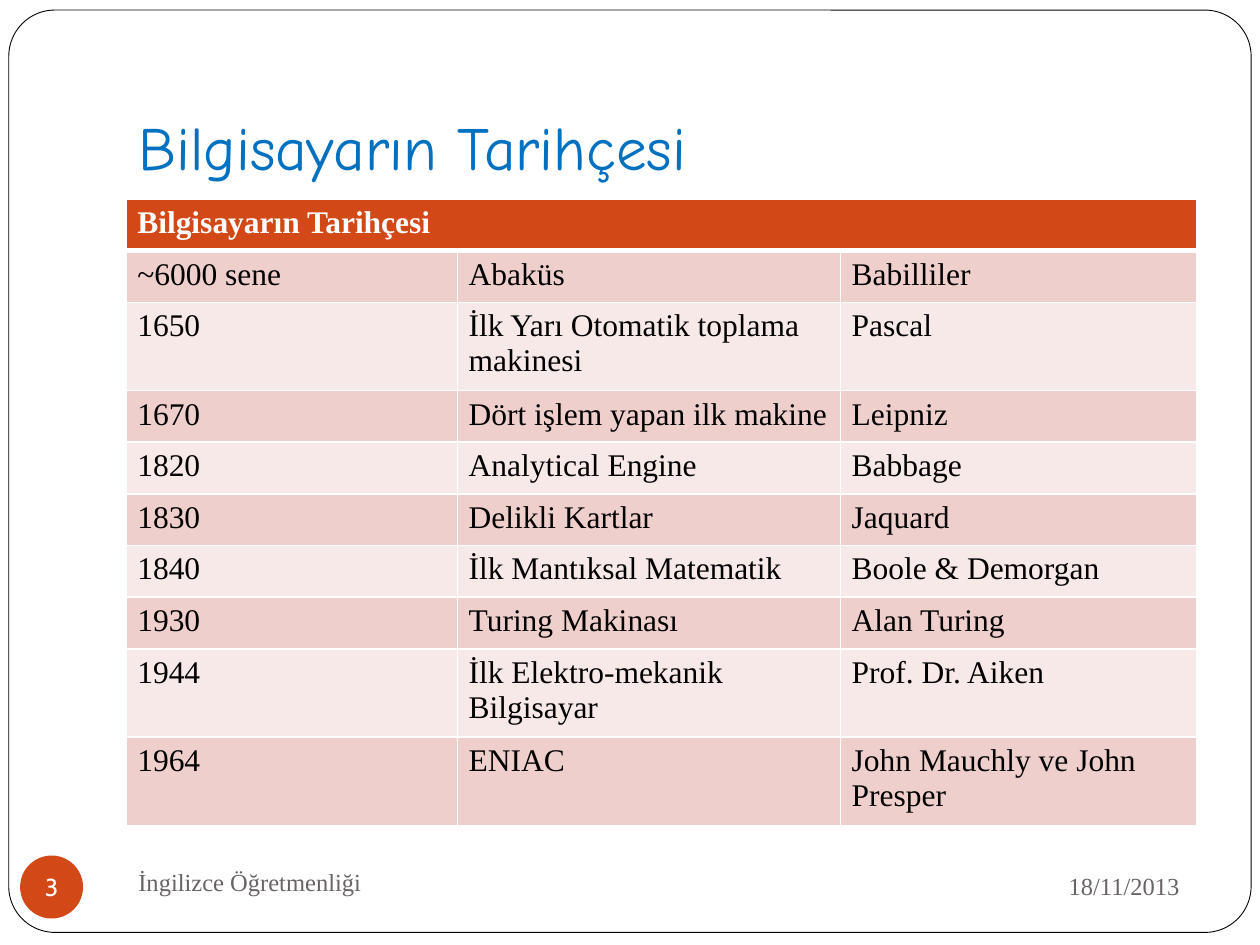
from lxml import etree
from pptx import Presentation
from pptx import util as u
from pptx.dml.color import RGBColor
from pptx.enum import shapes, text
from pptx.oxml import ns

# Content
TITLE = "Bilgisayarın Tarihçesi"
FOOTER, DATE, NUMBER = "İngilizce Öğretmenliği", "18/11/2013", "3"
HISTORY = [
    ("~6000 sene", "Abaküs", "Babilliler"),
    ("1650", "İlk Yarı Otomatik toplama makinesi", "Pascal"),
    ("1670", "Dört işlem yapan ilk makine", "Leipniz"),
    ("1820", "Analytical Engine", "Babbage"),
    ("1830", "Delikli Kartlar", "Jaquard"),
    ("1840", "İlk Mantıksal Matematik", "Boole & Demorgan"),
    ("1930", "Turing Makinası", "Alan Turing"),
    ("1944", "İlk Elektro-mekanik Bilgisayar", "Prof. Dr. Aiken"),
    ("1964", "ENIAC", "John Mauchly ve John Presper"),
]

# Look: styles are (font, points, colour, bold)
THEME = {
    "title": ("Comic Neue", 35, "0070C0", False),
    "head": ("Times New Roman", 18, "FFFFFF", True),
    "body": ("Times New Roman", 18, "000000", False),
    "footer": ("Times New Roman", 14, "696464", False),
    "number": ("Cabin", 14, "FFFFFF", False),
    "accent": "D34817", "bands": ("EFCFCC", "F7E9E8"),
    "paper": "FFFFFF", "outline": "000000",
}

# Layout in inches
WIDTH, HEIGHT = 10, 7.5
LEFT, CONTENT = WIDTH * 0.1, WIDTH * 0.85
COLUMNS = (2.63, 3.04, 2.83)
TABLE_TOP, ROW, WRAPPED_ROW = 1.58, 0.41, 0.65
WRAPPED = {"1650", "1944", "1964"}
INSETS = (0.1, 0.05, 0.1, 0.05)


def color(value):
    return RGBColor.from_string(value)


def inches(values):
    return [u.Inches(value) for value in values]


def write(frame, words, style, align=text.PP_ALIGN.LEFT):
    font, size, ink, bold = THEME[style]
    frame.text = words
    para = frame.paragraphs[0]
    para.alignment = align
    span = para.runs[0].font
    span.name, span.size, span.bold = font, u.Pt(size), bold
    span.color.rgb = color(ink)


def set_insets(target, insets):
    (target.margin_left, target.margin_top,
     target.margin_right, target.margin_bottom) = inches(insets)


def add_text(page, place, words, style, anchor=text.MSO_ANCHOR.MIDDLE,
             insets=INSETS, align=text.PP_ALIGN.LEFT):
    frame = page.shapes.add_textbox(*inches(place)).text_frame
    frame.word_wrap = True
    frame.vertical_anchor = anchor
    set_insets(frame, insets)
    write(frame, words, style, align)


def add_figure(page, kind, place, fill):
    figure = page.shapes.add_shape(kind, *inches(place))
    figure.shadow.inherit = False
    figure.fill.solid()
    figure.fill.fore_color.rgb = color(fill)
    return figure


def add_borders(cell, bottom):
    properties = cell._tc.get_or_add_tcPr()
    for side, points in (("L", 1), ("R", 1), ("T", 1), ("B", bottom)):
        line = etree.SubElement(properties, ns.qn("a:ln" + side), w=str(u.Pt(points)))
        fill = etree.SubElement(line, ns.qn("a:solidFill"))
        etree.SubElement(fill, ns.qn("a:srgbClr"), val=THEME["paper"])


def style_cell(cell, words, style, fill, bottom=1):
    set_insets(cell, INSETS)
    cell.margin_left = cell.margin_right = u.Inches(0.09)
    add_borders(cell, bottom)
    cell.fill.solid()
    cell.fill.fore_color.rgb = color(fill)
    if words:
        write(cell.text_frame, words, style)


def add_history(page):
    place = (LEFT, TABLE_TOP, CONTENT, ROW * (len(HISTORY) + 1))
    table = page.shapes.add_table(
        len(HISTORY) + 1, len(COLUMNS), *inches(place)).table
    for column, width in zip(table.columns, COLUMNS):
        column.width = u.Inches(width)
    # Heading across all columns
    table.cell(0, 0).merge(table.cell(0, len(COLUMNS) - 1))
    for index in range(len(COLUMNS)):
        style_cell(table.cell(0, index), "" if index else TITLE,
                   "head", THEME["accent"], bottom=3)
    table.rows[0].height = u.Inches(ROW)
    # Banded rows
    for number, entry in enumerate(HISTORY, start=1):
        height = WRAPPED_ROW if entry[0] in WRAPPED else ROW
        table.rows[number].height = u.Inches(height)
        for index, words in enumerate(entry):
            style_cell(table.cell(number, index), words, "body",
                       THEME["bands"][(number - 1) % 2])


def main():
    deck = Presentation()
    deck.slide_width, deck.slide_height = inches((WIDTH, HEIGHT))
    page = deck.slides.add_slide(deck.slide_layouts[6])

    # Rounded page frame
    frame = add_figure(page, shapes.MSO_SHAPE.ROUNDED_RECTANGLE,
                       (0.07, 0.08, 9.86, 7.32), THEME["paper"])
    frame.adjustments[0] = 0.05
    frame.line.color.rgb = color(THEME["outline"])
    frame.line.width = u.Pt(0.5)

    # Title and footer
    add_text(page, (LEFT, 0.3, CONTENT, 1.25), TITLE, "title",
             text.MSO_ANCHOR.BOTTOM, (0.1, 0.05, 0.1, 0.1))
    add_text(page, (6.75, 6.77, 2.71, 0.52), DATE, "footer",
             align=text.PP_ALIGN.RIGHT)
    add_text(page, (LEFT, 6.75, 4.33, 0.5), FOOTER, "footer")

    # Page number badge
    badge = add_figure(page, shapes.MSO_SHAPE.OVAL,
                       (0.16, 6.79, 0.5, 0.5), THEME["accent"])
    badge.line.fill.background()
    badge.text_frame.word_wrap = False
    badge.text_frame.vertical_anchor = text.MSO_ANCHOR.MIDDLE
    set_insets(badge.text_frame, (0, 0, 0, 0))
    write(badge.text_frame, NUMBER, "number", text.PP_ALIGN.CENTER)

    add_history(page)
    deck.save("out.pptx")


if __name__ == "__main__":
    main()
